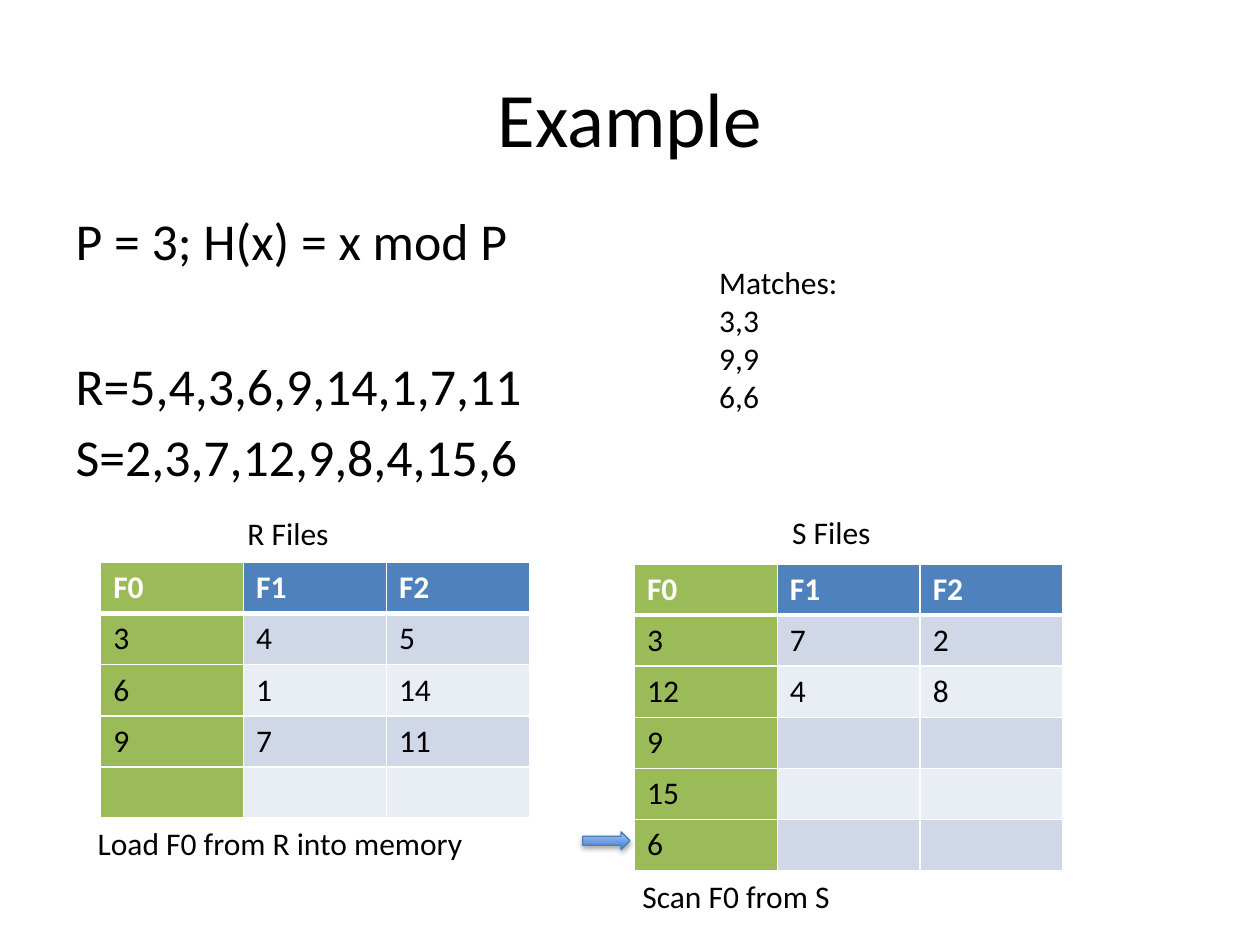
"""Build the hash join example slide."""
from lxml import etree
from pptx import Presentation
from pptx import util as u
from pptx.dml.color import RGBColor
from pptx.enum import shapes, text
from pptx.oxml import ns

COLORS = {
    "text": "000000", "white": "FFFFFF", "key": "9BBB59", "header": "4F81BD",
    "odd": "D0D8E8", "even": "E9EDF4", "outline": "4B7EBC",
    "arrow_dark": "3F80CE", "arrow_light": "A4C4FF",
}


class SlideBuilder:
    """Holds the style and the current slide."""

    font_name = "Calibri"
    label_size = 18

    def __init__(self, presentation):
        self.slide = presentation.slides.add_slide(presentation.slide_layouts[1])

    def color(self, name):
        return RGBColor.from_string(COLORS[name])

    def place(self, shape, left, top, width, height):
        shape.left, shape.top = u.Cm(left), u.Cm(top)
        shape.width, shape.height = u.Cm(width), u.Cm(height)

    def format_text(self, frame, size, color="text", bold=False):
        for paragraph in frame.paragraphs:
            for run in paragraph.runs:
                run.font.name, run.font.size = self.font_name, u.Pt(size)
                run.font.bold = bold
                run.font.color.rgb = self.color(color)

    def title(self, content, *box):
        shape = self.slide.shapes.title
        self.place(shape, *box)
        frame = shape.text_frame
        frame.text = content
        frame.vertical_anchor = text.MSO_ANCHOR.MIDDLE
        frame.paragraphs[0].alignment = text.PP_ALIGN.CENTER
        self.format_text(frame, 44)

    def body(self, lines, *box):
        shape = self.slide.placeholders[1]
        self.place(shape, *box)
        frame = shape.text_frame
        frame.text = "\n".join(content for content, _ in lines)
        frame.auto_size = text.MSO_AUTO_SIZE.NONE
        for paragraph, (_, space) in zip(frame.paragraphs, lines):
            paragraph.space_before = u.Pt(space)
            properties = paragraph._p.get_or_add_pPr()
            properties.set("marL", "0")
            properties.set("indent", "0")
            etree.SubElement(properties, ns.qn("a:buNone"))
        self.format_text(frame, 29.6)

    def label(self, content, *box):
        shape = self.slide.shapes.add_textbox(*map(u.Cm, box))
        frame = shape.text_frame
        frame.word_wrap = True
        frame.auto_size = text.MSO_AUTO_SIZE.SHAPE_TO_FIT_TEXT
        frame.text = content
        self.format_text(frame, self.label_size)

    def border(self, cell, side, points):
        properties = cell._tc.get_or_add_tcPr()
        line = etree.SubElement(properties, ns.qn(f"a:ln{side}"), w=str(u.Pt(points)))
        fill = etree.SubElement(line, ns.qn("a:solidFill"))
        etree.SubElement(fill, ns.qn("a:srgbClr"), val=COLORS["white"])

    def table(self, rows, left, top, column_width=2.88, row_height=1.03):
        columns = len(rows[0])
        table = self.slide.shapes.add_table(
            len(rows), columns, u.Cm(left), u.Cm(top),
            u.Cm(column_width * columns), u.Cm(row_height * len(rows))).table
        for column in table.columns:
            column.width = u.Cm(column_width)
        for r, values in enumerate(rows):
            table.rows[r].height = u.Cm(row_height)
            band = "header" if r == 0 else "odd" if r % 2 else "even"
            for c, value in enumerate(values):
                cell = table.cell(r, c)
                cell.text = value
                for side in "LRTB":
                    thick = (r, side) in ((0, "B"), (1, "T"))
                    self.border(cell, side, 3 if thick else 1)
                cell.fill.solid()
                cell.fill.fore_color.rgb = self.color("key" if c == 0 else band)
                self.format_text(cell.text_frame, self.label_size,
                                 "white" if r == 0 else "text", r == 0)

    def arrow(self, *box):
        shape = self.slide.shapes.add_shape(
            shapes.MSO_SHAPE.RIGHT_ARROW, *map(u.Cm, box))
        shape.fill.gradient()
        shape.fill.gradient_angle = 90
        for stop, name in zip(shape.fill.gradient_stops, ("arrow_dark", "arrow_light")):
            stop.color.rgb = self.color(name)
        shape.line.color.rgb = self.color("outline")
        shape.line.width = u.Pt(0.75)
        shape.shadow.inherit = False
        effects = shape._element.spPr.find(ns.qn("a:effectLst"))
        shadow = etree.SubElement(
            effects, ns.qn("a:outerShdw"), blurRad=str(u.Pt(3.1)),
            dist=str(u.Pt(1.8)), dir="5400000", rotWithShape="0")
        tint = etree.SubElement(shadow, ns.qn("a:srgbClr"), val=COLORS["text"])
        etree.SubElement(tint, ns.qn("a:alpha"), val="35000")


def main():
    presentation = Presentation()
    presentation.slide_width, presentation.slide_height = u.Cm(25.4), u.Cm(19.05)
    builder = SlideBuilder(presentation)
    builder.title("Example", 1.27, 0.76, 22.86, 3.18)
    builder.body([("P = 3; H(x) = x mod P", 5),
                  ("R=5,4,3,6,9,14,1,7,11", 47),
                  ("S=2,3,7,12,9,8,4,15,6", 5)], 1.27, 4.09, 22.86, 5.61)
    header = ("F0", "F1", "F2")
    builder.table([header, ("3", "7", "2"), ("12", "4", "8"),
                   ("9", "", ""), ("15", "", ""), ("6", "", "")], 12.79, 11.37)
    builder.table([header, ("3", "4", "5"), ("6", "1", "14"),
                   ("9", "7", "11"), ("", "", "")], 2.03, 11.34)
    builder.label("R Files", 4.74, 10.24, 6.2, 1.03)
    builder.label("S Files", 15.72, 10.21, 6.2, 1.03)
    builder.label("Matches:\n3,3\n9,9\n6,6", 14.25, 5.18, 8.81, 3.33)
    builder.label("Load F0 from R into memory", 1.72, 16.49, 9.2, 1.03)
    builder.label("Scan F0 from S", 12.7, 17.56, 9.2, 1.03)
    builder.arrow(11.75, 16.77, 0.95, 0.36)
    presentation.save("out.pptx")


if __name__ == "__main__":
    main()
